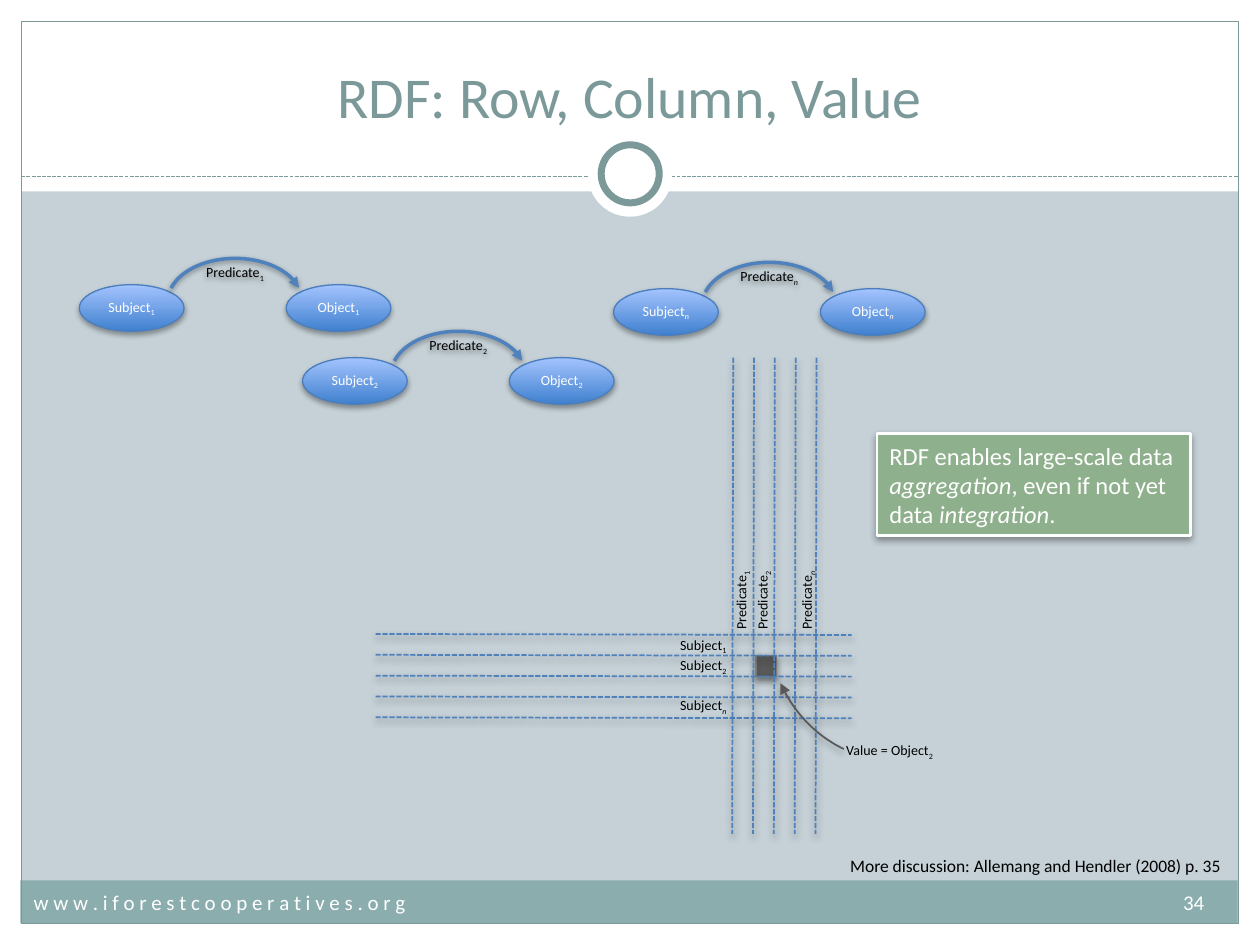
from dataclasses import dataclass
from typing import Optional

from lxml import etree
from pptx import Presentation
from pptx.dml.color import RGBColor
from pptx.enum.dml import MSO_LINE
from pptx.enum.shapes import MSO_CONNECTOR, MSO_SHAPE
from pptx.enum.text import MSO_ANCHOR, MSO_AUTO_SIZE, PP_ALIGN
from pptx.oxml.ns import qn
from pptx.util import Cm, Pt

RECTANGLE, OVAL, ARC = MSO_SHAPE.RECTANGLE, MSO_SHAPE.OVAL, MSO_SHAPE.ARC
STRAIGHT, DASH = MSO_CONNECTOR.STRAIGHT, MSO_LINE.SQUARE_DOT
CENTER, MIDDLE, BOTTOM = PP_ALIGN.CENTER, MSO_ANCHOR.MIDDLE, MSO_ANCHOR.BOTTOM
GROW = MSO_AUTO_SIZE.SHAPE_TO_FIT_TEXT
TITLE_ONLY = 5
FONT = "Calibri"
COLORS = {
    "background": "C5D1D7", "white": "FFFFFF", "black": "000000",
    "teal": "7C999A", "footer": "8CADAE", "dark": "595959", "gray": "808080",
    "blue": "4F81BD", "node_line": "4B7EBC", "node_bottom": "3F80CE",
    "node_top": "A4C4FF", "callout": "8FB08C",
}


@dataclass
class Box:
    """Position and size in centimetres."""
    left: float
    top: float
    width: float
    height: float

    def lengths(self) -> list:
        return [Cm(n) for n in (self.left, self.top, self.width, self.height)]


@dataclass
class Shadow:
    """Black shadow falling straight down: percent, points, points."""
    opacity: int
    blur: float
    distance: float


@dataclass
class Span:
    text: str
    italic: bool = False
    subscript: bool = False


@dataclass
class Triple:
    """An RDF statement, placed by the corner of its subject."""
    index: str
    left: float
    top: float


@dataclass
class Label:
    word: str
    index: str
    box: Box
    rotation: int = 0


SOFT = Shadow(35, 4, 2)
NODE_SHADOW = Shadow(35, 3.1, 1.8)
ARROW_SHADOW = Shadow(38, 3.1, 1.6)


def rgb(name: str) -> RGBColor:
    return RGBColor.from_string(COLORS[name])


def set_shadow(shape, shadow: Optional[Shadow]) -> None:
    effects = etree.SubElement(shape._element.spPr, qn("a:effectLst"))
    if shadow:
        outer = etree.SubElement(
            effects, qn("a:outerShdw"), blurRad=str(Pt(shadow.blur)),
            dist=str(Pt(shadow.distance)), dir="5400000", rotWithShape="0")
        color = etree.SubElement(outer, qn("a:srgbClr"), val=COLORS["black"])
        etree.SubElement(color, qn("a:alpha"), val=str(shadow.opacity * 1000))


def set_line(shape, color: str, width: float) -> None:
    shape.line.color.rgb = rgb(color)
    shape.line.width = Pt(width)


def add_shape(parent, kind, box: Box, fill: Optional[str] = None,
              line: Optional[str] = None, width: float = 0.75,
              shadow: Optional[Shadow] = None):
    shape = parent.add_shape(kind, *box.lengths())
    set_shadow(shape, shadow)
    if fill:
        shape.fill.solid()
        shape.fill.fore_color.rgb = rgb(fill)
    else:
        shape.fill.background()
    if line:
        set_line(shape, line, width)
    else:
        shape.line.fill.background()
    return shape


def add_dashed_line(parent, start: tuple, end: tuple, color: str, width: float,
                    shadow: Optional[Shadow] = None) -> None:
    line = parent.add_connector(STRAIGHT, *[Cm(n) for n in start + end])
    set_line(line, color, width)
    line.line.dash_style = DASH
    set_shadow(line, shadow)


def add_arc_arrow(parent, box: Box, angles: tuple, color: str, width: float,
                  shadow: Shadow):
    arc = add_shape(parent, ARC, box, None, color, width, shadow)
    for position, angle in enumerate(angles):
        arc.adjustments[position] = angle * 0.6  # 60000ths of a degree / 100000
    etree.SubElement(arc.line._get_or_add_ln(), qn("a:tailEnd"), type="triangle")
    return arc


def write(text_frame, spans: list, size: float, color: str, align=None) -> None:
    paragraph = text_frame.paragraphs[0]
    paragraph.alignment = align
    for span in spans:
        run = paragraph.add_run()
        run.text = span.text
        run.font.name, run.font.size = FONT, Pt(size)
        run.font.color.rgb = rgb(color)
        if span.italic:
            run.font.italic = True
        if span.subscript:
            run.font._element.set("baseline", "-25000")


def indexed(word: str, index: str) -> list:
    return [Span(word), Span(index, italic=index == "n", subscript=True)]


def write_centered(shape, spans: list, color: str) -> None:
    frame = shape.text_frame
    frame.margin_left = frame.margin_right = 0
    frame.vertical_anchor = MIDDLE
    write(frame, spans, 8, color, CENTER)


def add_text(parent, box: Box, spans: list, size: float, color: str):
    text_box = parent.add_textbox(*box.lengths())
    text_box.text_frame.word_wrap = False
    text_box.text_frame.auto_size = GROW
    write(text_box.text_frame, spans, size, color)
    return text_box


def add_triple(parent, triple: Triple) -> None:
    group = parent.add_group_shape().shapes
    for word, offset in (("Subject", 0), ("Object", 4.17)):
        node = add_shape(group, OVAL, Box(triple.left + offset, triple.top, 2.11, 0.94),
                         None, "node_line", 0.75, NODE_SHADOW)
        node.fill.gradient()
        node.fill.gradient_angle = 90
        for stop, color in zip(node.fill.gradient_stops, ("node_bottom", "node_top")):
            stop.color.rgb = rgb(color)
        write_centered(node, indexed(word, triple.index), "white")
    arrow = add_arc_arrow(group, Box(triple.left + 1.78, triple.top - 0.53, 2.72, 1.75),
                          (192.13, 347.71), "blue", 2, ARROW_SHADOW)
    write_centered(arrow, indexed("Predicate", triple.index), "black")


def add_frame(shapes) -> None:
    for box in (Box(0, 18.62, 25.4, 0.43), Box(0, 0, 25.4, 3.86),
                Box(0, 0, 0.43, 19.05), Box(24.97, 0, 0.43, 19.05)):
        add_shape(shapes, RECTANGLE, box, "white")
    add_shape(shapes, RECTANGLE, Box(0.41, 17.75, 24.54, 0.86), "footer")
    add_shape(shapes, RECTANGLE, Box(0.43, 0.43, 24.54, 18.19), None, "teal")
    add_dashed_line(shapes, (0.43, 3.56), (24.97, 3.56), "teal", 0.75)
    add_shape(shapes, OVAL, Box(11.85, 2.67, 1.7, 1.7), "white")
    add_shape(shapes, OVAL, Box(12.12, 2.92, 1.17, 1.17), "white", "teal", 4)


def add_grid(shapes) -> None:
    rows, columns = shapes.add_group_shape().shapes, shapes.add_group_shape().shapes
    for step in range(5):
        y, x = 12.78 + 0.42 * step, 14.78 + 0.42 * step
        add_dashed_line(rows, (7.57, y), (17.17, y + 0.02), "blue", 1, SOFT)
        add_dashed_line(columns, (x, 7.21), (x - 0.02, 16.81), "blue", 1, SOFT)


def main() -> None:
    presentation = Presentation()
    presentation.slide_width, presentation.slide_height = Cm(25.4), Cm(19.05)
    slide = presentation.slides.add_slide(presentation.slide_layouts[TITLE_ONLY])
    slide.background.fill.solid()
    slide.background.fill.fore_color.rgb = rgb("background")
    shapes = slide.shapes
    add_frame(shapes)

    # Title, raised above the frame
    title = shapes.title
    title.left, title.top, title.width, title.height = Box(0.84, 0.64, 23.7, 2.11).lengths()
    title.text_frame.vertical_anchor = BOTTOM
    write(title.text_frame, [Span("RDF: Row, Column, Value")], 33, "teal", CENTER)
    title._element.getparent().append(title._element)

    # Statements, and the table they form
    for triple in (Triple("1", 1.6, 5.74), Triple("2", 6.1, 7.21), Triple("n", 12.37, 5.82)):
        add_triple(shapes, triple)
    add_shape(shapes, RECTANGLE, Box(15.24, 13.21, 0.41, 0.43), "dark", "gray", 0.75,
              Shadow(45, 4, 2))
    add_grid(shapes)
    add_arc_arrow(shapes, Box(15.47, 9.75, 5.18, 5.59), (112.31, 152.1), "dark", 1, SOFT)
    labels = [Label("Value = Object", "2", Box(16.81, 14.83, 2.34, 0.61))]
    for index, top, left in (("1", 12.7, 14.07), ("2", 13.11, 14.5), ("n", 13.92, 15.39)):
        labels.append(Label("Subject", index, Box(13.46, top, 1.52, 0.61)))
        labels.append(Label("Predicate", index, Box(left, 11.76, 1.75, 0.61), 270))
    for label in labels:
        text_box = add_text(shapes, label.box, indexed(label.word, label.index), 8, "black")
        text_box.rotation = label.rotation

    # Callout
    callout = add_shape(shapes, RECTANGLE, Box(17.68, 8.74, 6.32, 2.06), "callout",
                        "white", 1.57, SOFT)
    write(callout.text_frame, [
        Span("RDF enables large-scale data "), Span("aggregation", italic=True),
        Span(", even if not yet data "), Span("integration", italic=True), Span("."),
    ], 14, "white", PP_ALIGN.LEFT)

    # Reference and footer
    add_text(shapes, Box(16.89, 17.12, 8.08, 0.69),
             [Span("More discussion: Allemang and Hendler (2008) p. 35")], 10, "black")
    footer = add_text(shapes, Box(0.43, 17.81, 24.51, 1.02), [
        Span("w w w . i f o r e s t c o o p e r a t i v e s . o r g\t34")], 12, "white")
    footer.text_frame.auto_size = MSO_AUTO_SIZE.NONE
    properties = footer.text_frame.paragraphs[0]._p.get_or_add_pPr()
    tabs = etree.SubElement(properties, qn("a:tabLst"))
    etree.SubElement(tabs, qn("a:tab"), pos=str(Cm(23.6)), algn="r")

    presentation.save("out.pptx")


if __name__ == "__main__":
    main()
